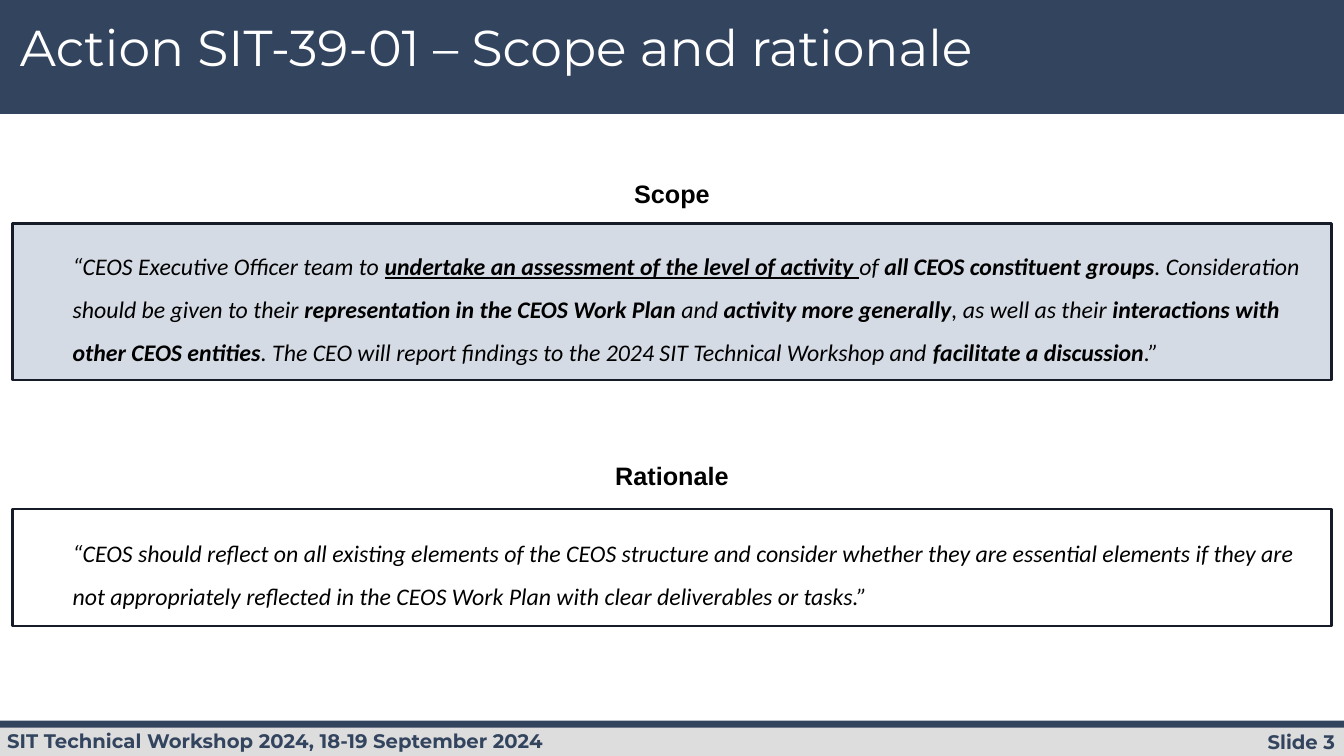
"""Build the slide on scope and rationale of Action SIT-39-01."""
import pptx
import pptx.dml.color
import pptx.enum.shapes
import pptx.enum.text
import pptx.util

RGBColor = pptx.dml.color.RGBColor
Align = pptx.enum.text.PP_ALIGN
Anchor = pptx.enum.text.MSO_ANCHOR

NAVY = RGBColor(0x33, 0x44, 0x5F)
OUTLINE = RGBColor(0x15, 0x1C, 0x28)
PALE_BLUE = RGBColor(0xD5, 0xDB, 0xE5)
LIGHT_GREY = RGBColor(0xDD, 0xDD, 0xDD)
WHITE = RGBColor(0xFF, 0xFF, 0xFF)
BLACK = RGBColor(0x00, 0x00, 0x00)

SLIDE_WIDTH = pptx.util.Inches(13.33)
SLIDE_HEIGHT = pptx.util.Inches(7.5)

PLAIN, BOLD, UNDERLINED, BOLD_UNDERLINED = (
    (False, False), (True, False), (False, True), (True, True))

SCOPE = [
    ("“CEOS Executive Officer team to ", PLAIN),
    ("undertake an assessment of the level of activity", BOLD_UNDERLINED),
    (" ", UNDERLINED),
    ("of ", PLAIN),
    ("all CEOS constituent groups", BOLD),
    (". Consideration should be given to their ", PLAIN),
    ("representation in the CEOS Work Plan", BOLD),
    (" and ", PLAIN),
    ("activity more generally", BOLD),
    (", as well as their ", PLAIN),
    ("interactions with other CEOS entities", BOLD),
    (". The CEO will report findings to the 2024 SIT Technical Workshop and ", PLAIN),
    ("facilitate a discussion", BOLD),
    (".”", PLAIN),
]
RATIONALE = [
    ("“CEOS should reflect on all existing elements of the CEOS structure and "
     "consider whether they are essential elements if they are not appropriately "
     "reflected in the CEOS Work Plan with clear deliverables or tasks.”", PLAIN),
]


def place(left, top, width, height):
    """Turn percentages of the slide's size into lengths."""
    return (int(SLIDE_WIDTH * left / 100), int(SLIDE_HEIGHT * top / 100),
            int(SLIDE_WIDTH * width / 100), int(SLIDE_HEIGHT * height / 100))


def set_font(font, face, size, color):
    """Set the face, size and colour of a font."""
    font.name = face
    font.size = pptx.util.Pt(size)
    font.color.rgb = color


def add_band(slide, area, color):
    """Add a filled rectangle without an outline."""
    band = slide.shapes.add_shape(
        pptx.enum.shapes.MSO_SHAPE.RECTANGLE, *place(*area))
    band.shadow.inherit = False
    band.fill.solid()
    band.fill.fore_color.rgb = color
    band.line.fill.background()
    return band


def add_label(slide, area, text, face, size, color, bold=True, align=Align.LEFT):
    """Add one line of text."""
    frame = slide.shapes.add_textbox(*place(*area)).text_frame
    frame.word_wrap = True
    line = frame.paragraphs[0]
    line.text = text
    line.alignment = align
    set_font(line.font, face, size, color)
    line.font.bold = bold


def add_quote(slide, area, color, phrases):
    """Add an outlined box holding an italic quotation."""
    box = add_band(slide, area, color)
    box.line.color.rgb = OUTLINE
    box.line.width = pptx.util.Pt(2)
    frame = box.text_frame
    frame.word_wrap = True
    frame.vertical_anchor = Anchor.MIDDLE
    frame.margin_left = pptx.util.Inches(0.6)
    quote = frame.paragraphs[0]
    quote.alignment = Align.LEFT
    quote.line_spacing = 1.5
    set_font(quote.font, "Calibri", 17, BLACK)
    quote.font.italic = True
    for text, (bold, underline) in phrases:
        phrase = quote.add_run()
        phrase.text = text
        if bold:
            phrase.font.bold = True
        if underline:
            phrase.font.underline = True


def add_section(slide, heading, heading_top, box_top, box_height, color, phrases):
    """Add a centred heading and the quotation under it."""
    add_quote(slide, (0.9, box_top, 98.2, box_height), color, phrases)
    add_label(slide, (37.73, heading_top, 24.53, 5.33), heading,
              "Arial", 18, BLACK, align=Align.CENTER)


def main():
    """Build and save the slide."""
    deck = pptx.Presentation()
    deck.slide_width = SLIDE_WIDTH
    deck.slide_height = SLIDE_HEIGHT
    slide = deck.slides.add_slide(deck.slide_layouts[6])

    add_band(slide, (0, 0, 100, 15.07), NAVY)
    add_band(slide, (0, 95.87, 100, 4.13), LIGHT_GREY)
    add_band(slide, (0, 95.33, 100, 0.93), NAVY)
    add_label(slide, (84.25, 95.87, 15.83, 4.53), "Slide 3",
              "Montserrat", 14, NAVY, align=Align.RIGHT)
    add_label(slide, (-0.2, 95.73, 48.2, 4.53),
              "SIT Technical Workshop 2024, 18-19 September 2024",
              "Montserrat", 14, NAVY)
    add_label(slide, (0.75, 1.47, 73.2, 9.47),
              "Action SIT-39-01 – Scope and rationale",
              "Montserrat", 36, WHITE, bold=False)

    add_section(slide, "Scope", 22.93, 29.6, 20.67, PALE_BLUE, SCOPE)
    add_section(slide, "Rationale", 60.27, 67.33, 15.47, WHITE, RATIONALE)
    deck.save("out.pptx")


if __name__ == "__main__":
    main()
